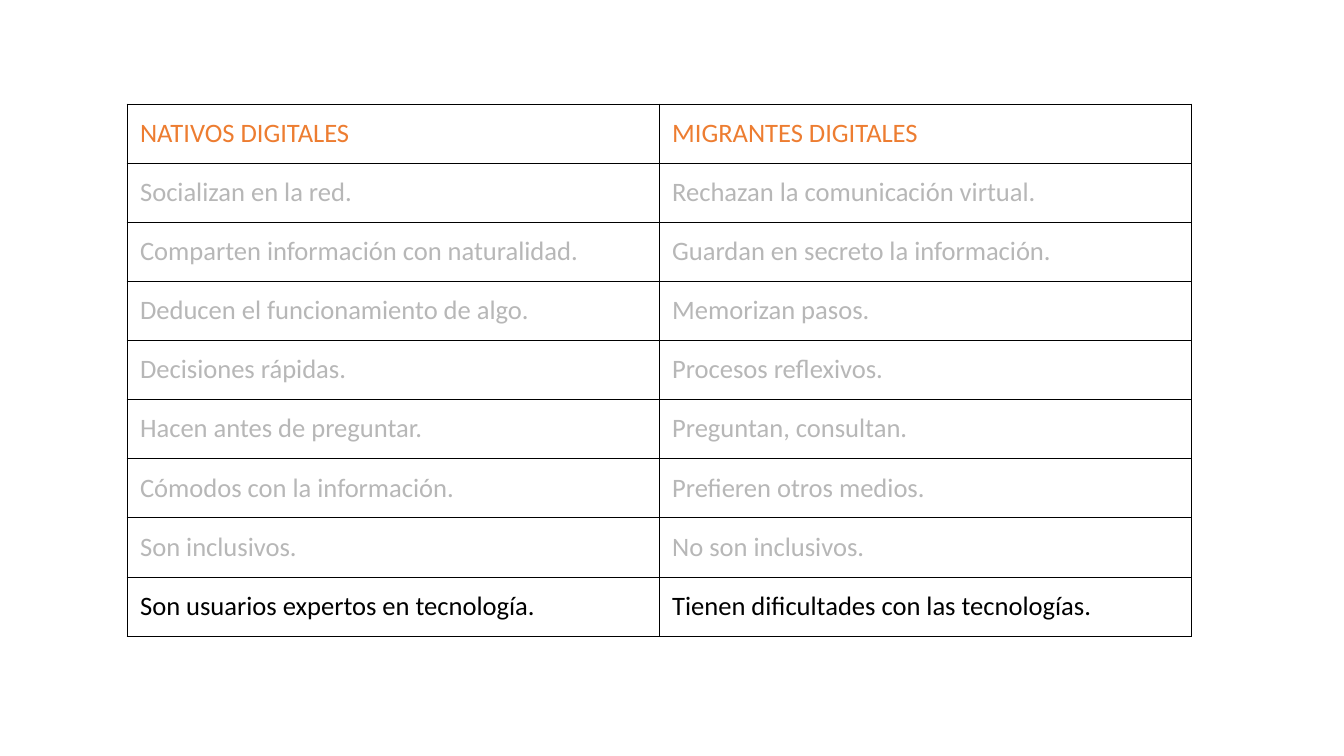
from dataclasses import dataclass

from lxml import etree
from pptx import Presentation
from pptx.dml.color import RGBColor
from pptx.enum.text import MSO_ANCHOR
from pptx.oxml.ns import qn
from pptx.util import Cm, Pt

TOP = MSO_ANCHOR.TOP

ORANGE = RGBColor(0xED, 0x7D, 0x31)
GREY = RGBColor(0xB7, 0xB7, 0xB7)
BLACK = RGBColor(0x00, 0x00, 0x00)

FONT = "Calibri"
SIZE = Pt(19)
LINE = Pt(0.75)
INSET = Cm(0.33)
LEFT, HEAD = Cm(3.2), Cm(2.62)
WIDE, HIGH = Cm(13.41), Cm(1.49)


@dataclass
class Row:
    native: str
    migrant: str
    color: RGBColor = GREY


ROWS = [
    Row("NATIVOS DIGITALES", "MIGRANTES DIGITALES", ORANGE),
    Row("Socializan en la red.", "Rechazan la comunicación virtual."),
    Row("Comparten información con naturalidad.", "Guardan en secreto la información."),
    Row("Deducen el funcionamiento de algo.", "Memorizan pasos."),
    Row("Decisiones rápidas.", "Procesos reflexivos."),
    Row("Hacen antes de preguntar.", "Preguntan, consultan."),
    Row("Cómodos con la información.", "Prefieren otros medios."),
    Row("Son inclusivos.", "No son inclusivos."),
    Row("Son usuarios expertos en tecnología.", "Tienen dificultades con las tecnologías.", BLACK),
]


def add_border(cell) -> None:
    """Rule all four sides; the lines must precede the fill in the XML."""
    props = cell._tc.get_or_add_tcPr()
    for place, side in enumerate(("a:lnL", "a:lnR", "a:lnT", "a:lnB")):
        line = etree.Element(qn(side), w=str(LINE))
        fill = etree.SubElement(line, qn("a:solidFill"))
        etree.SubElement(fill, qn("a:srgbClr"), val=str(BLACK))
        props.insert(place, line)


def fill_cell(cell, text: str, color: RGBColor) -> None:
    cell.text = text
    cell.vertical_anchor = TOP
    cell.margin_left = cell.margin_right = INSET
    cell.margin_top = cell.margin_bottom = INSET
    cell.fill.background()
    font = cell.text_frame.paragraphs[0].font
    font.name, font.size, font.bold = FONT, SIZE, False
    font.color.rgb = color
    add_border(cell)


def main() -> None:
    # Slide
    deck = Presentation()
    deck.slide_width, deck.slide_height = Cm(33.87), Cm(19.05)
    slide = deck.slides.add_slide(deck.slide_layouts[6])

    # Comparison table
    count = len(ROWS)
    table = slide.shapes.add_table(count, 2, LEFT, HEAD, WIDE * 2, HIGH * count).table
    table.first_row = table.horz_banding = False
    for col in table.columns:
        col.width = WIDE
    for r, row in enumerate(ROWS):
        table.rows[r].height = HIGH
        for c, text in enumerate((row.native, row.migrant)):
            fill_cell(table.cell(r, c), text, row.color)

    deck.save("out.pptx")


if __name__ == "__main__":
    main()
